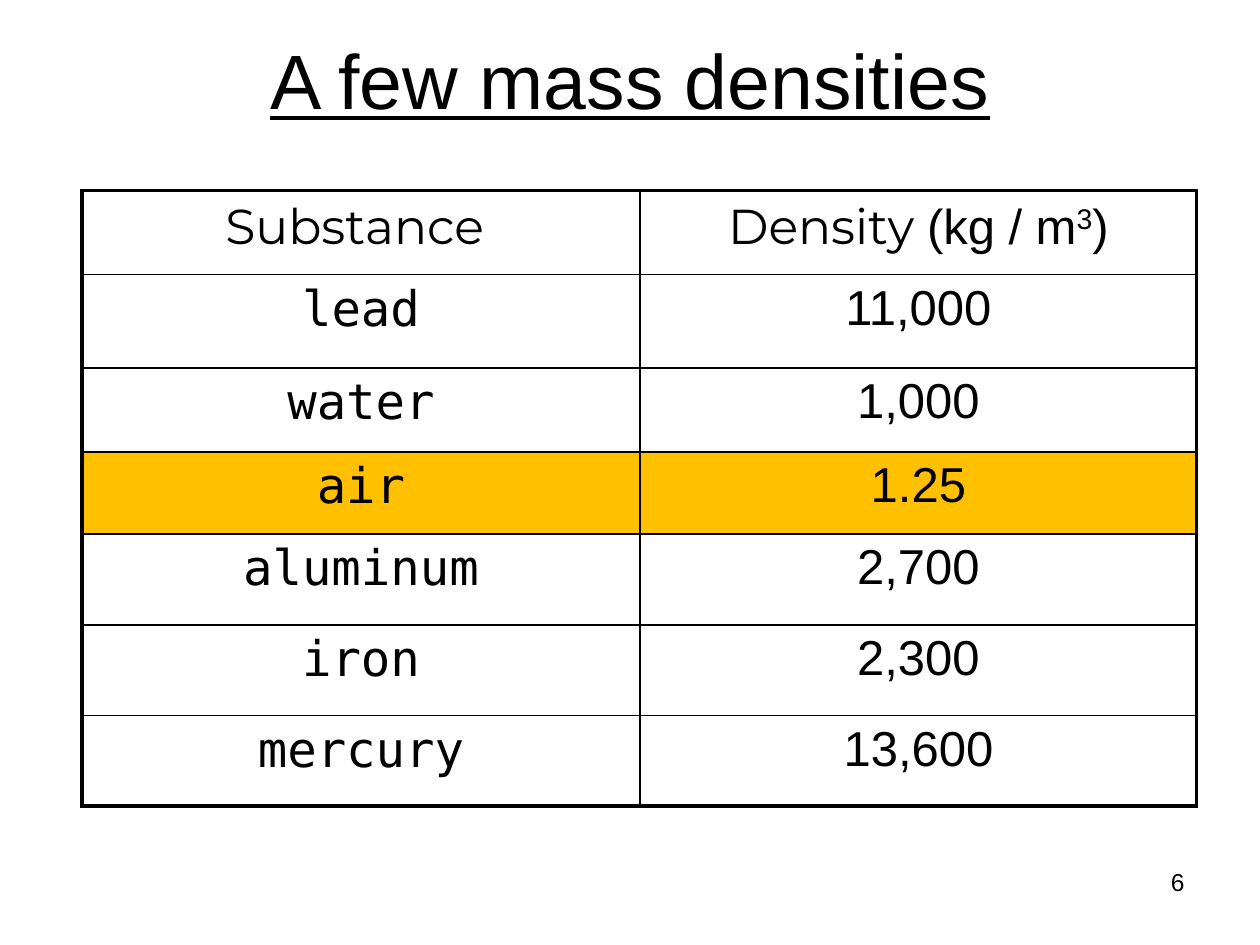
import dataclasses

import lxml.etree
import pptx
import pptx.dml.color
import pptx.enum.text
import pptx.oxml.ns
import pptx.util

Pt = pptx.util.Pt
ALIGN = pptx.enum.text.PP_ALIGN
ANCHOR = pptx.enum.text.MSO_ANCHOR


@dataclasses.dataclass(frozen=True)
class Theme:
    ink: str = "000000"
    highlight: str = "FFC000"
    sans: str = "Arial"
    mono: str = "DejaVu Sans Mono"
    heading: str = "Montserrat"
    title_size: float = 44
    table_size: float = 28
    number_size: float = 14
    outer_line: float = 2.25
    inner_line: float = 1


@dataclasses.dataclass(frozen=True)
class Piece:
    text: str
    font: str
    superscript: bool = False


@dataclasses.dataclass(frozen=True)
class Row:
    substance: list[Piece]
    density: list[Piece]
    height: float
    highlighted: bool = False


THEME = Theme()


def material(name: str, density: str, height: float, highlighted: bool = False) -> Row:
    return Row([Piece(name, THEME.mono)], [Piece(density, THEME.sans)], height, highlighted)


ROWS = [
    Row(
        [Piece("Substance ", THEME.heading)],
        [
            Piece("Density ", THEME.heading),
            Piece("(kg / m", THEME.sans),
            Piece("3", THEME.sans, superscript=True),
            Piece(")", THEME.sans),
        ],
        48.24,
    ),
    material("lead", "11,000", 53.28),
    material("water", "1,000", 48.24),
    material("air", "1.25", 46.8, highlighted=True),
    material("aluminum", "2,700", 51.84),
    material("iron", "2,300", 51.84),
    material("mercury", "13,600", 51.84),
]
COLUMN_WIDTHS = [319, 318]


def rgb(value: str) -> pptx.dml.color.RGBColor:
    return pptx.dml.color.RGBColor.from_string(value)


def style_run(run, font: str, size: float) -> None:
    run.font.name = font
    run.font.size = Pt(size)
    run.font.color.rgb = rgb(THEME.ink)


def space_before(paragraph, percent: int) -> None:
    """Space above as a share of the line height."""
    spacing = lxml.etree.SubElement(
        paragraph._p.get_or_add_pPr(), pptx.oxml.ns.qn("a:spcBef"))
    lxml.etree.SubElement(
        spacing, pptx.oxml.ns.qn("a:spcPct"), val=str(percent * 1000))


def set_borders(cell, widths: dict[str, float]) -> None:
    """Borders precede the fill in the cell properties."""
    properties = cell._tc.get_or_add_tcPr()
    for position, (side, width) in enumerate(widths.items()):
        border = lxml.etree.Element(
            pptx.oxml.ns.qn(f"a:ln{side}"), w=str(int(Pt(width))))
        fill = lxml.etree.SubElement(border, pptx.oxml.ns.qn("a:solidFill"))
        lxml.etree.SubElement(fill, pptx.oxml.ns.qn("a:srgbClr"), val=THEME.ink)
        properties.insert(position, border)


def fill_cell(cell, pieces: list[Piece], highlighted: bool) -> None:
    paragraph = cell.text_frame.paragraphs[0]
    paragraph.alignment = ALIGN.CENTER
    space_before(paragraph, 20)
    for piece in pieces:
        run = paragraph.add_run()
        run.text = piece.text
        style_run(run, piece.font, THEME.table_size)
        if piece.superscript:
            run._r.get_or_add_rPr().set("baseline", "30000")
    if highlighted:
        cell.fill.solid()
        cell.fill.fore_color.rgb = rgb(THEME.highlight)
    else:
        cell.fill.background()


def add_title(slide) -> None:
    title = slide.shapes.title
    title.left, title.top, title.width, title.height = Pt(0), Pt(0), Pt(720), Pt(90)
    title.text_frame.text = "A few mass densities"
    title.text_frame.vertical_anchor = ANCHOR.MIDDLE
    paragraph = title.text_frame.paragraphs[0]
    paragraph.alignment = ALIGN.CENTER
    style_run(paragraph.runs[0], THEME.sans, THEME.title_size)
    paragraph.runs[0].font.underline = True


def add_density_table(slide) -> None:
    table = slide.shapes.add_table(
        len(ROWS), len(COLUMN_WIDTHS), Pt(46.8), Pt(108.72),
        Pt(sum(COLUMN_WIDTHS)), Pt(sum(row.height for row in ROWS))).table
    table.first_row = False
    table.horz_banding = False
    for column, width in zip(table.columns, COLUMN_WIDTHS):
        column.width = Pt(width)

    last_row, last_column = len(ROWS) - 1, len(COLUMN_WIDTHS) - 1
    for r, row in enumerate(ROWS):
        table.rows[r].height = Pt(row.height)
        for c, pieces in enumerate((row.substance, row.density)):
            cell = table.cell(r, c)
            fill_cell(cell, pieces, row.highlighted)
            on_edge = {"L": c == 0, "R": c == last_column,
                       "T": r == 0, "B": r == last_row}
            set_borders(cell, {
                side: THEME.outer_line if outer else THEME.inner_line
                for side, outer in on_edge.items()})


def add_page_number(slide) -> None:
    number = slide.shapes.add_textbox(Pt(516.24), Pt(491.76), Pt(167.76), Pt(37.44))
    number.text_frame.word_wrap = True
    number.text_frame.text = "6"
    paragraph = number.text_frame.paragraphs[0]
    paragraph.alignment = ALIGN.RIGHT
    style_run(paragraph.runs[0], THEME.sans, THEME.number_size)


def main() -> None:
    presentation = pptx.Presentation()
    presentation.slide_width, presentation.slide_height = Pt(720), Pt(540)
    title_only = presentation.slide_layouts[5]
    slide = presentation.slides.add_slide(title_only)
    add_title(slide)
    add_density_table(slide)
    add_page_number(slide)
    presentation.save("out.pptx")


if __name__ == "__main__":
    main()
